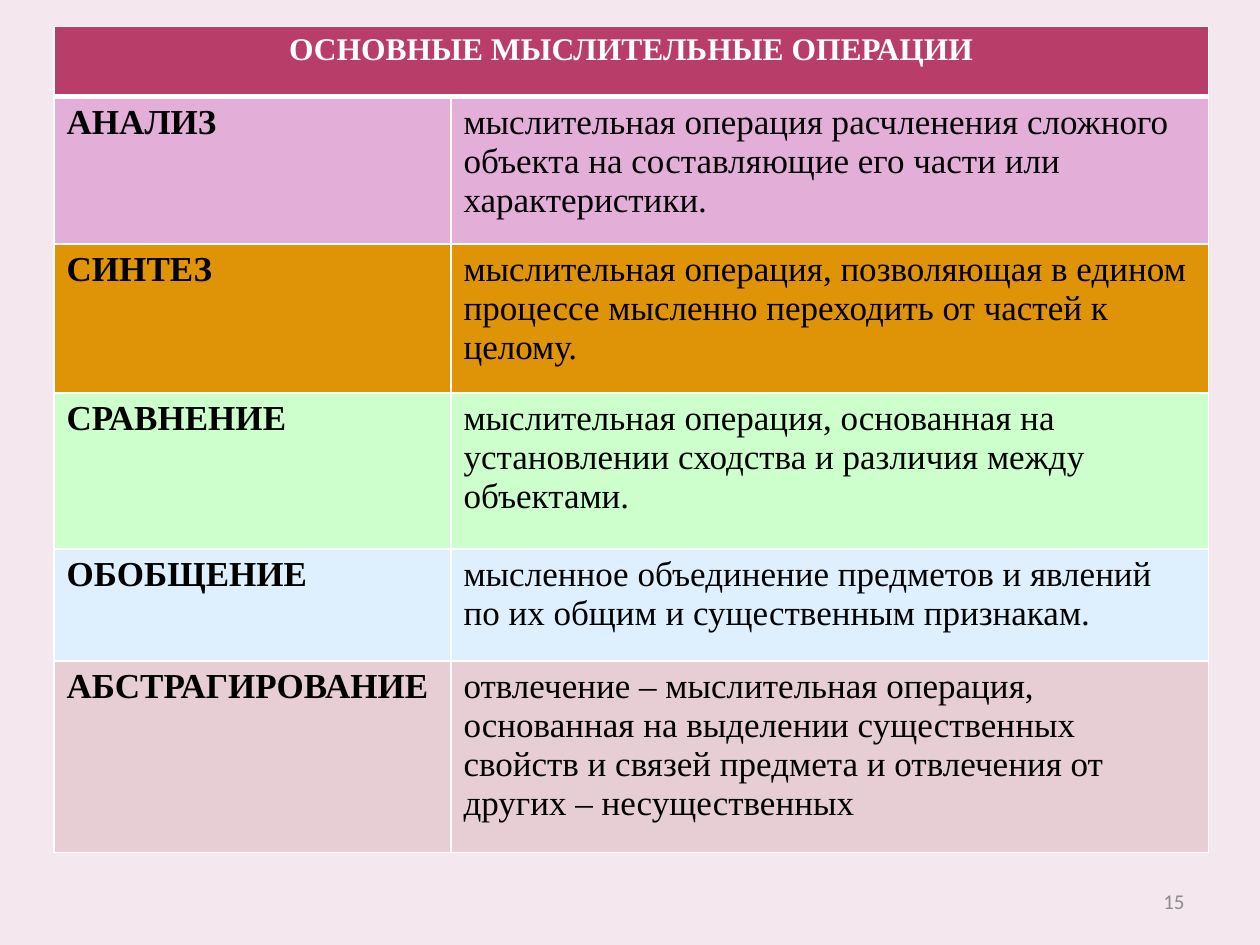
from typing import NamedTuple

from lxml import etree
from pptx import Presentation
from pptx.dml.color import RGBColor
from pptx.enum.text import MSO_ANCHOR, PP_ALIGN
from pptx.oxml.ns import qn
from pptx.util import Cm, Pt

LEFT, CENTER, RIGHT = PP_ALIGN.LEFT, PP_ALIGN.CENTER, PP_ALIGN.RIGHT
MIDDLE = MSO_ANCHOR.MIDDLE
SERIF, SANS = "Times New Roman", "Calibri"
WHITE, BLACK = "FFFFFF", "000000"
SIDES = ("a:lnL", "a:lnR", "a:lnT", "a:lnB")


class Term(NamedTuple):
    name: str
    text: str
    fill: str
    height: float


TITLE = "ОСНОВНЫЕ МЫСЛИТЕЛЬНЫЕ ОПЕРАЦИИ"
HEAD = 1.42
COLS = (8.0, 15.27)
TERMS = [
    Term("АНАЛИЗ", "мыслительная операция расчленения сложного объекта "
         "на составляющие его части или характеристики.", "E3AFD8", 2.97),
    Term("СИНТЕЗ", "мыслительная операция, позволяющая в едином процессе "
         "мысленно переходить от частей к целому.", "DF9307", 3.0),
    Term("СРАВНЕНИЕ", "мыслительная операция, основанная на установлении "
         "сходства и различия между объектами.", "CCFFCC", 3.15),
    Term("ОБОБЩЕНИЕ", "мысленное объединение предметов и явлений по их "
         "общим и существенным признакам.", "DEF0FE", 2.26),
    Term("АБСТРАГИРОВАНИЕ", "отвлечение – мыслительная операция, основанная "
         "на выделении существенных свойств и связей предмета и отвлечения "
         "от других – несущественных", "E6CED4", 3.86),
]


def paint(target, color: str) -> None:
    target.solid()
    target.fore_color.rgb = RGBColor.from_string(color)


def write(frame, text: str, size: int, color: str, face: str = SERIF,
          bold: bool = False, align=LEFT) -> None:
    para = frame.paragraphs[0]
    para.text = text
    para.alignment = align
    font = para.font
    font.name, font.size, font.bold = face, Pt(size), bold
    font.color.rgb = RGBColor.from_string(color)


def edge(cell, base: int = 1) -> None:
    """Draw white borders; base is the width of the bottom one in points."""
    props = cell._tc.get_or_add_tcPr()
    for spot, side in enumerate(SIDES):
        width = base if side == "a:lnB" else 1
        line = etree.Element(qn(side), w=str(Pt(width)))
        fill = etree.SubElement(line, qn("a:solidFill"))
        etree.SubElement(fill, qn("a:srgbClr"), val=WHITE)
        props.insert(spot, line)


def draw_table(slide) -> None:
    heights = [HEAD] + [term.height for term in TERMS]
    table = slide.shapes.add_table(
        len(heights), len(COLS), Cm(1.09), Cm(0.53),
        Cm(sum(COLS)), Cm(sum(heights))).table
    for col, width in zip(table.columns, COLS):
        col.width = Cm(width)
    for row, height in zip(table.rows, heights):
        row.height = Cm(height)

    # Heading across both columns
    head = table.cell(0, 0)
    head.merge(table.cell(0, 1))
    write(head.text_frame, TITLE, 18, WHITE, bold=True, align=CENTER)
    for col in range(len(COLS)):
        cell = table.cell(0, col)
        paint(cell.fill, "B83D68")
        edge(cell, base=3)

    # One row for each operation
    for row, term in enumerate(TERMS, 1):
        for col, text in enumerate((term.name, term.text)):
            cell = table.cell(row, col)
            write(cell.text_frame, text, 20, BLACK, bold=col == 0)
            paint(cell.fill, term.fill)
            edge(cell)
            if row == 1:
                top = cell._tc.tcPr.find(qn("a:lnT"))
                top.set("w", str(Pt(3)))


def draw_page(slide) -> None:
    frame = slide.shapes.add_textbox(
        Cm(18.2), Cm(17.66), Cm(5.93), Cm(1.01)).text_frame
    frame.word_wrap = True
    frame.vertical_anchor = MIDDLE
    write(frame, "15", 12, "8C8C8C", face=SANS, align=RIGHT)


def main() -> None:
    deck = Presentation()
    deck.slide_width, deck.slide_height = Cm(25.4), Cm(19.05)
    slide = deck.slides.add_slide(deck.slide_layouts[6])
    paint(slide.background.fill, "F4E7ED")
    draw_table(slide)
    draw_page(slide)
    deck.save("out.pptx")


if __name__ == "__main__":
    main()
